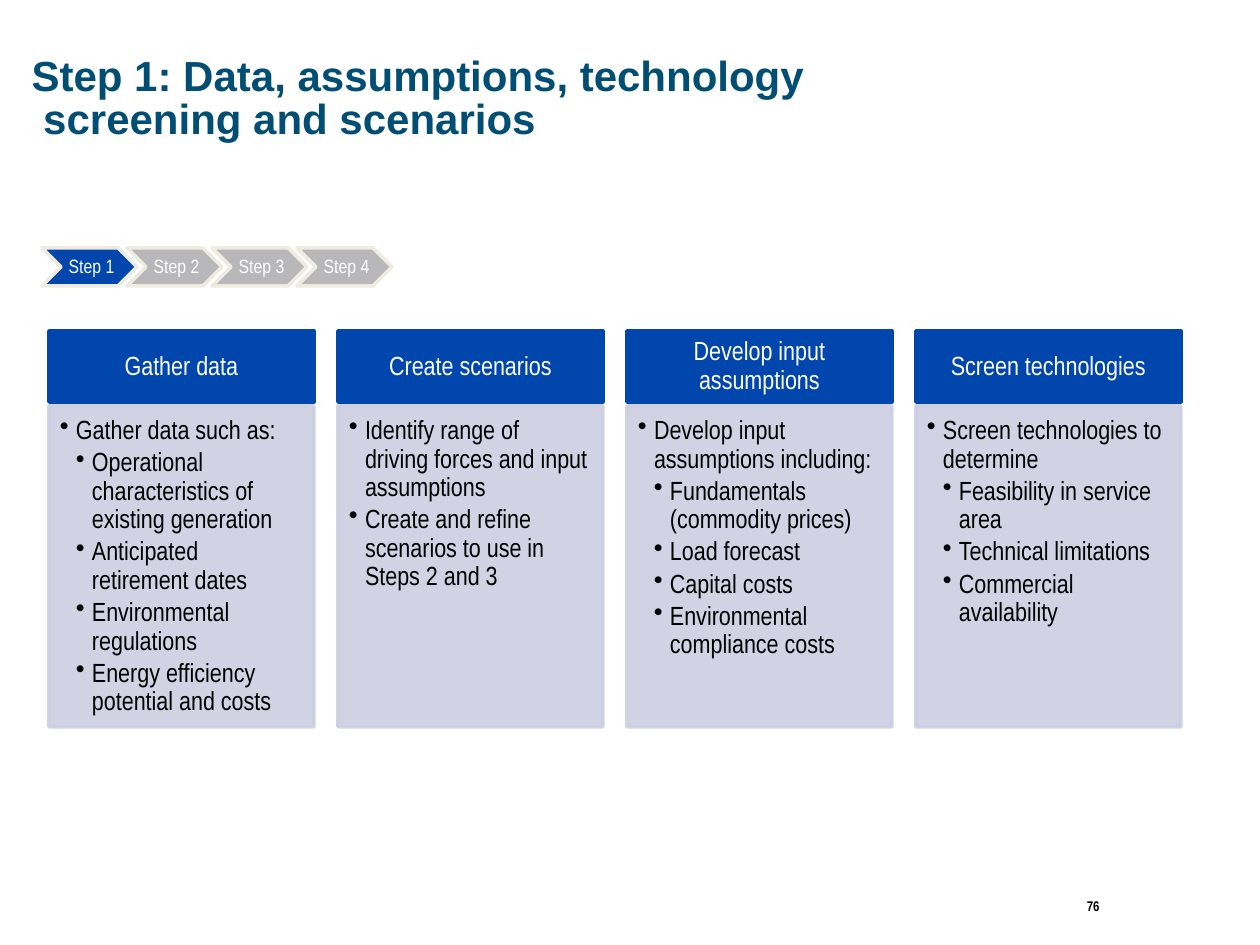
"""Builds the Step 1 slide: step chevrons above four task columns."""
import dataclasses

import lxml.etree
import pptx
import pptx.dml.color
import pptx.enum.shapes
import pptx.enum.text
import pptx.oxml.ns
import pptx.util


@dataclasses.dataclass(frozen=True)
class Theme:
    title_font: str = "Arial"
    text_font: str = "Arial Narrow"
    title: str = "004E74"
    accent: str = "0046AD"
    inactive: str = "B8B8BA"
    outline: str = "EEECE1"
    panel: str = "CCCFE3"
    light: str = "FFFFFF"
    dark: str = "000000"
    title_size: int = 24
    text_size: int = 15
    step_size: int = 11
    number_size: int = 8


THEME = Theme()
PX = 914400 / 126
RECTANGLE = pptx.enum.shapes.MSO_SHAPE.RECTANGLE
CHEVRON = pptx.enum.shapes.MSO_SHAPE.CHEVRON
ALIGN = pptx.enum.text.PP_ALIGN
ANCHOR = pptx.enum.text.MSO_ANCHOR


def px(*lengths):
    return [round(length * PX) for length in lengths]


def add_block(page, preset, bounds, fill, line, margins, anchor):
    block = page.shapes.add_shape(preset, *px(*bounds))
    block.shadow.inherit = False
    block.fill.solid()
    block.fill.fore_color.rgb = pptx.dml.color.RGBColor.from_string(fill)
    block.line.color.rgb = pptx.dml.color.RGBColor.from_string(line)
    block.line.width = pptx.util.Pt(2)
    frame = block.text_frame
    frame.margin_left, frame.margin_top, frame.margin_right, frame.margin_bottom = px(*margins)
    frame.vertical_anchor = anchor
    frame.word_wrap = preset == RECTANGLE
    return block


def write(para, text, size, color, align, spacing=0.9, font=THEME.text_font, bold=False):
    para.text = text
    para.alignment = align
    para.line_spacing = spacing
    para.font.name = font
    para.font.size = pptx.util.Pt(size)
    para.font.bold = bold
    para.font.color.rgb = pptx.dml.color.RGBColor.from_string(color)


columns = [
    ("Gather data", [
        (1, "Gather data such as:"),
        (2, "Operational characteristics of existing generation"),
        (2, "Anticipated retirement dates"),
        (2, "Environmental regulations"),
        (2, "Energy efficiency potential and costs"),
    ]),
    ("Create scenarios", [
        (1, "Identify range of driving forces and input assumptions"),
        (1, "Create and refine scenarios to use in Steps 2 and 3"),
    ]),
    ("Develop input assumptions", [
        (1, "Develop input assumptions including:"),
        (2, "Fundamentals (commodity prices)"),
        (2, "Load forecast"),
        (2, "Capital costs"),
        (2, "Environmental compliance costs"),
    ]),
    ("Screen technologies", [
        (1, "Screen technologies to determine"),
        (2, "Feasibility in service area"),
        (2, "Technical limitations"),
        (2, "Commercial availability"),
    ]),
]

deck = pptx.Presentation()
deck.slide_width, deck.slide_height = px(1260, 945)
page = deck.slides.add_slide(deck.slide_layouts[5])

title = page.shapes.title
title.left, title.top, title.width, title.height = px(19, 32, 853, 137)
title.text_frame.vertical_anchor = ANCHOR.MIDDLE
write(title.text_frame.paragraphs[0], "Step 1: Data, assumptions, technology\v screening and scenarios",
      THEME.title_size, THEME.title, ALIGN.LEFT, 0.85, THEME.title_font, True)

number_box = page.shapes.add_textbox(*px(919, 891, 193, 54))
number_box.text_frame.word_wrap = True
write(number_box.text_frame.paragraphs[0], "76", THEME.number_size, THEME.dark, ALIGN.RIGHT, 1.0, bold=True)

for index in range(4):
    fill = THEME.inactive if index else THEME.accent
    chevron = add_block(page, CHEVRON, (42 + 85 * index, 248, 95, 38), fill, THEME.outline,
                        (6, 2, 2, 2), ANCHOR.MIDDLE)
    write(chevron.text_frame.paragraphs[0], f"Step {index + 1}", THEME.step_size, THEME.light, ALIGN.CENTER)

for index, (heading, items) in enumerate(columns):
    left = 49 + 289 * index
    header = add_block(page, RECTANGLE, (left, 331, 265, 71), THEME.accent, THEME.accent,
                       (15, 9, 15, 9), ANCHOR.MIDDLE)
    write(header.text_frame.paragraphs[0], heading, THEME.text_size, THEME.light, ALIGN.CENTER)

    panel = add_block(page, RECTANGLE, (left, 406, 265, 321), THEME.panel, THEME.panel,
                      (11, 11, 15, 16), ANCHOR.TOP)
    for color in panel.fill._xPr.iter(pptx.oxml.ns.qn("a:srgbClr")):
        lxml.etree.SubElement(color, pptx.oxml.ns.qn("a:alpha"), val="90000")

    frame = panel.text_frame
    for position, (level, text) in enumerate(items):
        para = frame.add_paragraph() if position else frame.paragraphs[0]
        para.level = level
        properties = para._p.get_or_add_pPr()
        indent, hanging = px(16 * level, -16)
        properties.set("marL", str(indent))
        properties.set("indent", str(hanging))
        lxml.etree.SubElement(properties, pptx.oxml.ns.qn("a:buChar"), char="•")
        para.space_after = pptx.util.Pt(2.25)
        write(para, text, THEME.text_size, THEME.dark, ALIGN.LEFT)

deck.save("out.pptx")
